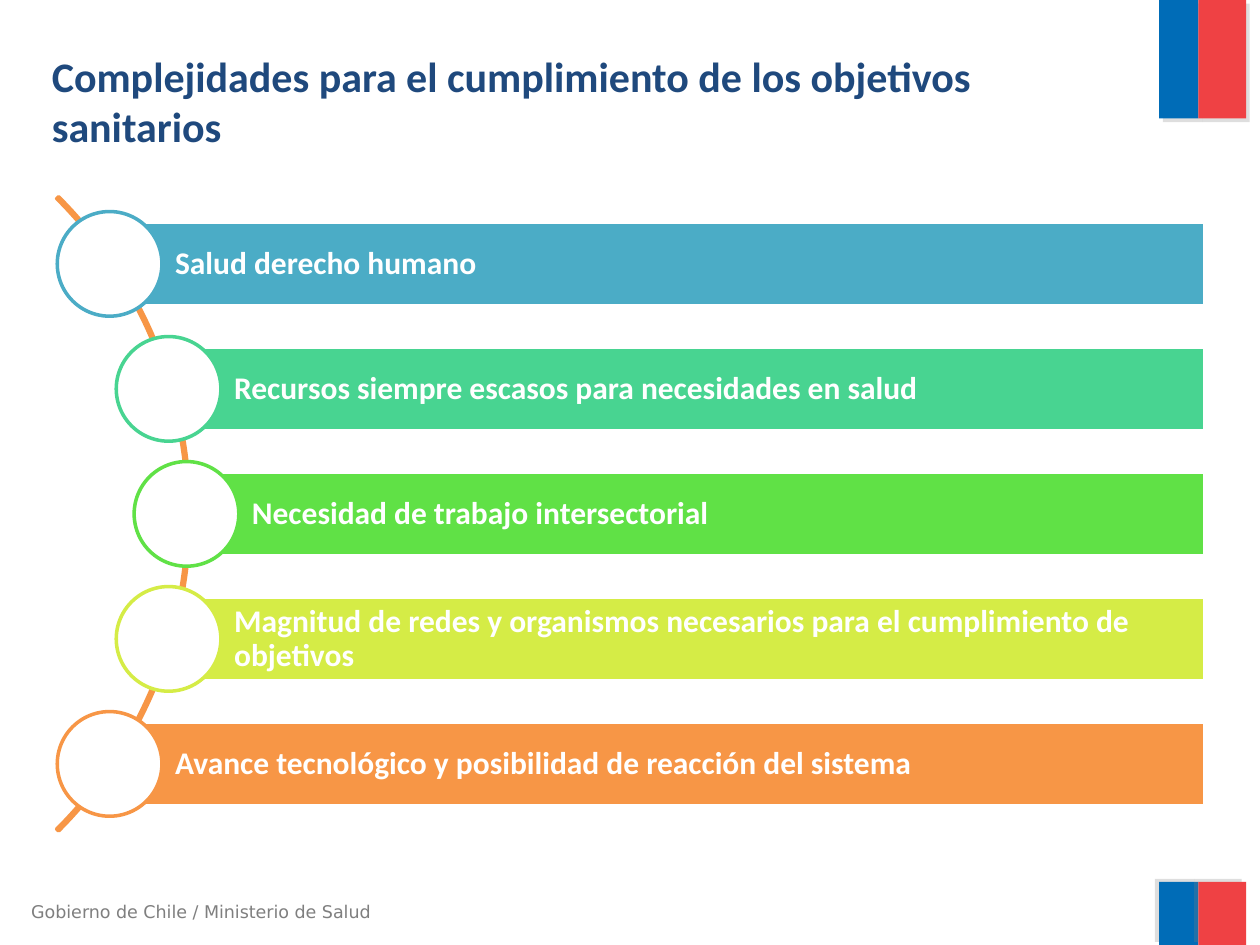
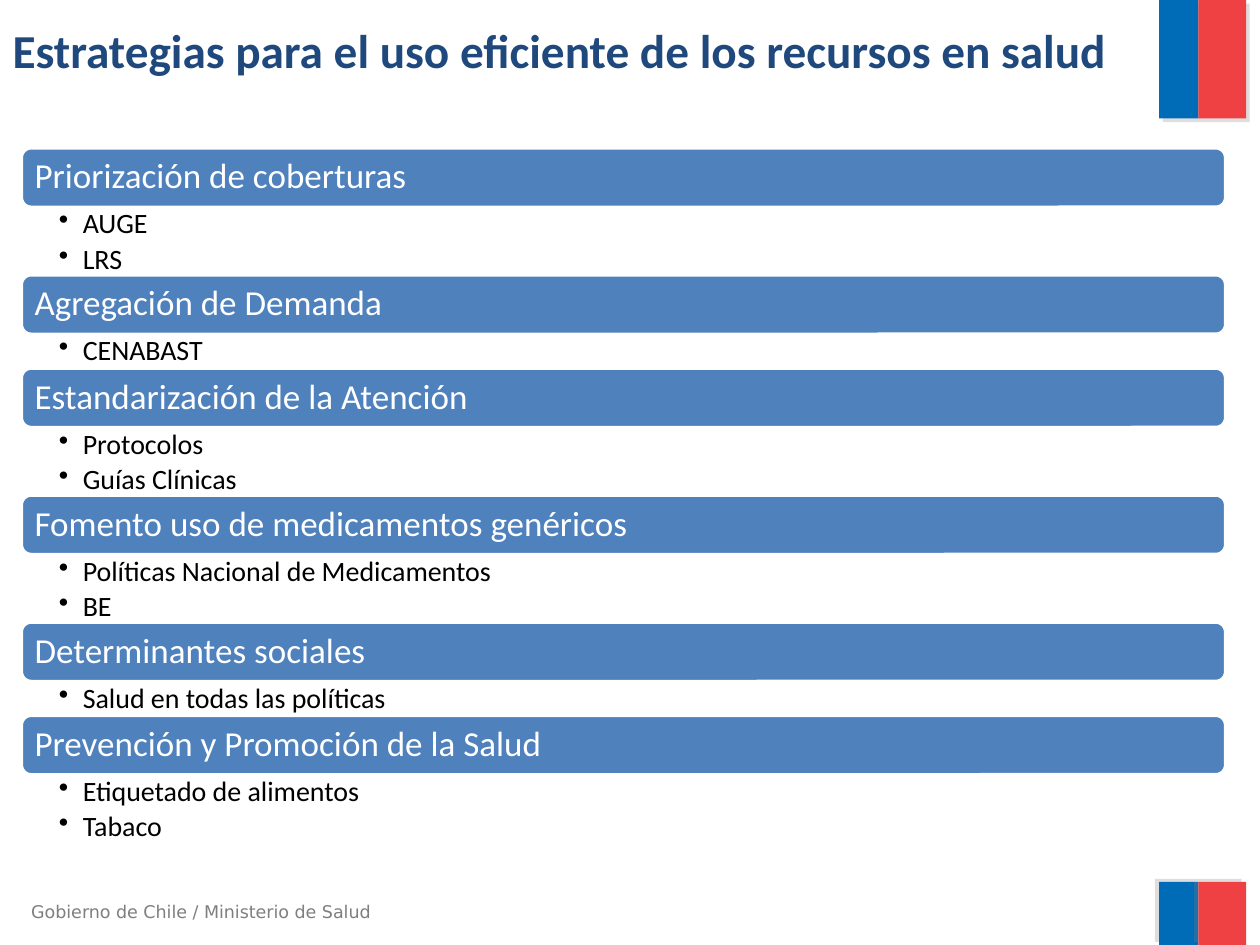
"""Build two slides on health goals and the efficient use of resources."""
from math import sqrt

from lxml.etree import SubElement
from pptx import Presentation
from pptx.dml.color import RGBColor
from pptx.enum.shapes import MSO_SHAPE
from pptx.enum.text import MSO_ANCHOR, MSO_AUTO_SIZE, PP_ALIGN
from pptx.oxml.ns import qn
from pptx.util import Cm, Pt

WHITE = RGBColor(0xFF, 0xFF, 0xFF)
BLACK = RGBColor(0x00, 0x00, 0x00)
GRAY = RGBColor(0x7F, 0x7F, 0x7F)
NAVY = RGBColor(0x1F, 0x49, 0x7D)
BLUE = RGBColor(0x00, 0x6C, 0xB7)
RED = RGBColor(0xEF, 0x41, 0x44)
STEEL = RGBColor(0x4F, 0x81, 0xBD)
ORANGE = RGBColor(0xF7, 0x96, 0x46)
FONT = "Calibri"
FOOT_FONT = "DejaVu Sans"

HURDLES = [
    ("Salud derecho humano", RGBColor(0x4B, 0xAC, 0xC6)),
    ("Recursos siempre escasos para necesidades en salud", RGBColor(0x48, 0xD4, 0x91)),
    ("Necesidad de trabajo intersectorial", RGBColor(0x60, 0xE1, 0x46)),
    ("Magnitud de redes y organismos necesarios para el cumplimiento de objetivos",
     RGBColor(0xD5, 0xEC, 0x46)),
    ("Avance tecnológico y posibilidad de reacción del sistema", ORANGE),
]
PLANS = [
    ("Priorización de coberturas", ["AUGE", "LRS"]),
    ("Agregación de Demanda", ["CENABAST"]),
    ("Estandarización de la Atención", ["Protocolos", "Guías Clínicas"]),
    ("Fomento uso de medicamentos genéricos", ["Políticas Nacional de Medicamentos", "BE"]),
    ("Determinantes sociales", ["Salud en todas las políticas"]),
    ("Prevención y Promoción de la Salud", ["Etiquetado de alimentos", "Tabaco"]),
]


def set_text(shape, text, size, color, bold=False, font=FONT, space=None, gap=0):
    """Fill a shape with left-aligned text in one style."""
    frame = shape.text_frame
    frame.text = text
    frame.word_wrap = True
    frame.auto_size = MSO_AUTO_SIZE.NONE
    for para in frame.paragraphs:
        para.alignment = PP_ALIGN.LEFT
        para.line_spacing = space
        para.space_after = Pt(gap)
        for run in para.runs:
            run.font.size = Pt(size)
            run.font.name = font
            run.font.bold = bold
            run.font.color.rgb = color
    return frame


def set_inset(frame, left, top, right):
    """Set the inner margins of a text frame in centimetres."""
    frame.margin_left, frame.margin_right = Cm(left), Cm(right)
    frame.margin_top = frame.margin_bottom = Cm(top)


def add_form(slide, kind, box, fill=None, line=None):
    """Add a flat preset shape; box is left, top, width, height in cm."""
    shape = slide.shapes.add_shape(kind, *map(Cm, box))
    shape.shadow.inherit = False
    if fill is None:
        shape.fill.background()
    else:
        shape.fill.solid()
        shape.fill.fore_color.rgb = fill
    if line is None:
        shape.line.fill.background()
    else:
        shape.line.color.rgb = line
        shape.line.width = Pt(2)
    return shape


def add_shade(shape, angle):
    """Give a shape a hard, faint grey shadow."""
    effects = shape.element.spPr.find(qn("a:effectLst"))
    shade = SubElement(effects, qn("a:outerShdw"), dist=str(Pt(3)),
                       dir=str(angle * 60000), algn="ctr", rotWithShape="0")
    color = SubElement(shade, qn("a:srgbClr"), val="808080")
    SubElement(color, qn("a:alpha"), val="25000")


def add_frame(slide, layout):
    """Draw the colour bands and footer, then move them to the layout."""
    parts = []
    for top, height, angle in [(0, 2.39, 45), (17.78, 1.27, 215)]:
        for left, width, color in [(23.37, 0.79, BLUE), (24.16, 0.96, RED)]:
            band = add_form(slide, MSO_SHAPE.RECTANGLE, (left, top, width, height), color)
            add_shade(band, angle)
            parts.append(band)
    foot = slide.shapes.add_textbox(Cm(0.38), Cm(18.03), Cm(7.67), Cm(0.69))
    set_text(foot, "Gobierno de Chile / Ministerio de Salud", 10, GRAY, font=FOOT_FONT)
    parts.append(foot)
    for num, part in enumerate(parts, 20):
        part.element.nvSpPr.cNvPr.set("id", str(num))
        layout.shapes.element.append(part.element)


def set_title(slide, text, size, box):
    """Place and format the title."""
    title = slide.shapes.title
    title.left, title.top, title.width, title.height = map(Cm, box)
    frame = set_text(title, text, size, NAVY, bold=True, space=1.0)
    frame.vertical_anchor = MSO_ANCHOR.TOP


def add_bar(slide, kind, box, color, text, size, inset, bold=False):
    """Add a filled bar with white text."""
    bar = add_form(slide, kind, box, color, WHITE)
    frame = set_text(bar, text, size, WHITE, bold, space=0.9)
    frame.vertical_anchor = MSO_ANCHOR.MIDDLE
    set_inset(frame, *inset)


def add_list(slide, box, items):
    """Add a bulleted list."""
    area = slide.shapes.add_textbox(*map(Cm, box))
    frame = set_text(area, "\n".join(items), 16, BLACK, space=0.9, gap=3)
    set_inset(frame, 0.76, 0.05, 0.3)
    for para in frame.paragraphs:
        props = para._p.get_or_add_pPr()
        props.set("marL", str(Cm(0.48)))
        props.set("indent", str(-Cm(0.48)))
        SubElement(props, qn("a:buChar"), char="•")


def add_curve(slide):
    """Set bars and rings at equal steps along an arc."""
    mid_x, mid_y, radius, outer = -5.21, 10.36, 8.97, 9.04
    step, ring, height, right = 2.52, 2.11, 1.68, 24.28
    arc = add_form(slide, MSO_SHAPE.BLOCK_ARC,
                   (mid_x - outer, mid_y - outer, 2 * outer, 2 * outer), line=ORANGE)
    for num, value in enumerate((189, 27, 0.003)):
        arc.adjustments[num] = value
    for num, (text, color) in enumerate(HURDLES):
        drop = (num - len(HURDLES) // 2) * step
        left, row = mid_x + sqrt(radius ** 2 - drop ** 2), mid_y + drop
        add_bar(slide, MSO_SHAPE.RECTANGLE, (left, row - height / 2, right - left, height),
                color, text, 18, (1.32, 0.13, 0.13), bold=True)
        add_form(slide, MSO_SHAPE.OVAL, (left - ring / 2, row - ring / 2, ring, ring),
                 WHITE, color)


def add_stack(slide):
    """Stack the headings, each above its list."""
    left, top, width, height, line = 0.43, 2.98, 24.28, 1.2, 0.68
    for head, items in PLANS:
        add_bar(slide, MSO_SHAPE.ROUNDED_RECTANGLE, (left, top, width, height),
                STEEL, head, 20, (0.21, 0.1, 0.21))
        top += height
        depth = line * len(items)
        add_list(slide, (left, top, width, depth), items)
        top += depth


def main():
    """Build and save the slides."""
    deck = Presentation()
    deck.slide_width, deck.slide_height = Cm(25.4), Cm(19.05)
    layout = deck.slide_layouts[5]

    goals = deck.slides.add_slide(layout)
    add_frame(goals, layout)
    set_title(goals, "Complejidades para el cumplimiento de los objetivos sanitarios",
              24, (0.79, 0.89, 22.3, 2.24))
    add_curve(goals)

    plans = deck.slides.add_slide(layout)
    set_title(plans, "Estrategias para el uso eficiente de los recursos en salud",
              27, (0, 0.3, 24.28, 2.24))
    add_stack(plans)

    deck.save("out.pptx")


if __name__ == "__main__":
    main()
